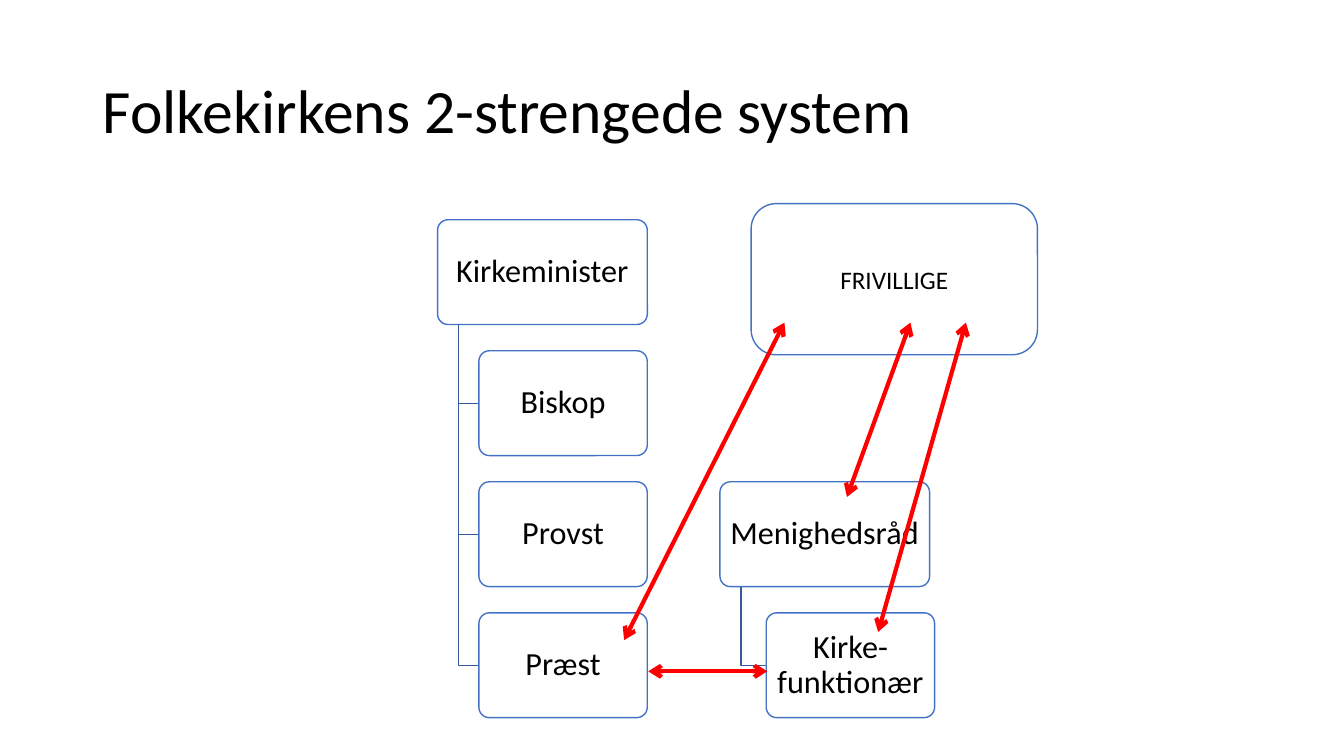
from pptx import Presentation
from pptx.dml.color import RGBColor
from pptx.enum.shapes import MSO_CONNECTOR, MSO_SHAPE
from pptx.enum.text import MSO_ANCHOR, MSO_AUTO_SIZE, PP_ALIGN
from pptx.oxml.ns import qn
from pptx.util import Inches, Pt
from lxml import etree

BLACK = RGBColor(0x00, 0x00, 0x00)
WHITE = RGBColor(0xFF, 0xFF, 0xFF)
BLUE = RGBColor(0x44, 0x72, 0xC4)
DARK_BLUE = RGBColor(0x36, 0x5B, 0x9D)
RED = RGBColor(0xFF, 0x00, 0x00)
ROUNDED = MSO_SHAPE.ROUNDED_RECTANGLE
STRAIGHT = MSO_CONNECTOR.STRAIGHT
MIDDLE = MSO_ANCHOR.MIDDLE
LEFT, CENTER = PP_ALIGN.LEFT, PP_ALIGN.CENTER

BOX_HEIGHT = 1.04
PARENT_WIDTH = 2.08
CHILD_WIDTH = 1.67
ROW_STEP = 1.3
STEM_INSET = 0.21


def write_text(shape, text, size, alignment, line_spacing=0.9):
    frame = shape.text_frame
    frame.text = text
    frame.word_wrap = True
    frame.auto_size = MSO_AUTO_SIZE.NONE
    frame.vertical_anchor = MIDDLE
    paragraph = frame.paragraphs[0]
    paragraph.alignment = alignment
    paragraph.line_spacing = line_spacing
    font_format = {"name": "Calibri", "size": Pt(size)}
    for attribute, value in font_format.items():
        setattr(paragraph.font, attribute, value)
    paragraph.font.color.rgb = BLACK


def add_box(left, top, width, height, text, size, line_spacing=0.9):
    box = slide.shapes.add_shape(
        ROUNDED, Inches(left), Inches(top), Inches(width), Inches(height))
    box.shadow.inherit = False
    box.fill.solid()
    box.fill.fore_color.rgb = WHITE
    box.line.color.rgb = BLUE
    box.line.width = Pt(1)
    write_text(box, text, size, CENTER, line_spacing)
    return box


presentation = Presentation()
presentation.slide_width = Inches(13.33)
presentation.slide_height = Inches(7.5)
slide = presentation.slides.add_slide(presentation.slide_layouts[5])

title = slide.shapes.title
title_place = {"left": 0.92, "top": 0.4, "width": 11.5, "height": 1.45}
for attribute, value in title_place.items():
    setattr(title, attribute, Inches(value))
write_text(title, "Folkekirkens 2-strengede system", 44, LEFT)

# Each strand: parent left, parent top, child left, names from the top down
strands = [
    (4.34, 2.18, 4.75, ["Kirkeminister", "Biskop", "Provst", "Præst"]),
    (7.14, 4.78, 7.6, ["Menighedsråd", "Kirke-funktionær"]),
]
for parent_left, parent_top, child_left, names in strands:
    stem_x = parent_left + STEM_INSET
    stem_top = parent_top + BOX_HEIGHT
    for row, name in enumerate(names):
        top = parent_top + row * ROW_STEP
        left, width = parent_left, PARENT_WIDTH
        if row > 0:
            left, width = child_left, CHILD_WIDTH
            middle = top + BOX_HEIGHT / 2
            builder = slide.shapes.build_freeform(Inches(stem_x), Inches(stem_top))
            builder.add_line_segments(
                [(Inches(stem_x), Inches(middle)), (Inches(left), Inches(middle))],
                close=False)
            branch = builder.convert_to_shape()
            branch.shadow.inherit = False
            branch.fill.background()
            branch.line.color.rgb = DARK_BLUE
            branch.line.width = Pt(1)
        box = add_box(left, top, width, BOX_HEIGHT, name, 23)
        box.adjustments[0] = 0.1
        # The rounded corners already inset the text a little
        margins = {"margin_left": 0.04, "margin_right": 0.04,
                   "margin_top": 0.03, "margin_bottom": 0.03}
        for attribute, value in margins.items():
            setattr(box.text_frame, attribute, Inches(value))

add_box(7.45, 2.02, 2.84, 1.5, "FRIVILLIGE", 18, 1.0)

arrows = [
    (6.43, 6.66, 7.61, 6.66),
    (6.19, 6.35, 7.78, 3.2),
    (8.4, 4.93, 9.03, 3.2),
    (9.58, 3.2, 8.71, 6.27),
]
for ends in arrows:
    arrow = slide.shapes.add_connector(STRAIGHT, *[Inches(end) for end in ends])
    arrow.line.color.rgb = RED
    arrow.line.width = Pt(3)
    line_element = arrow.line._get_or_add_ln()
    for tag in ("a:headEnd", "a:tailEnd"):
        etree.SubElement(line_element, qn(tag), type="arrow")
    etree.SubElement(arrow._element.spPr, qn("a:effectLst"))

presentation.save("out.pptx")
